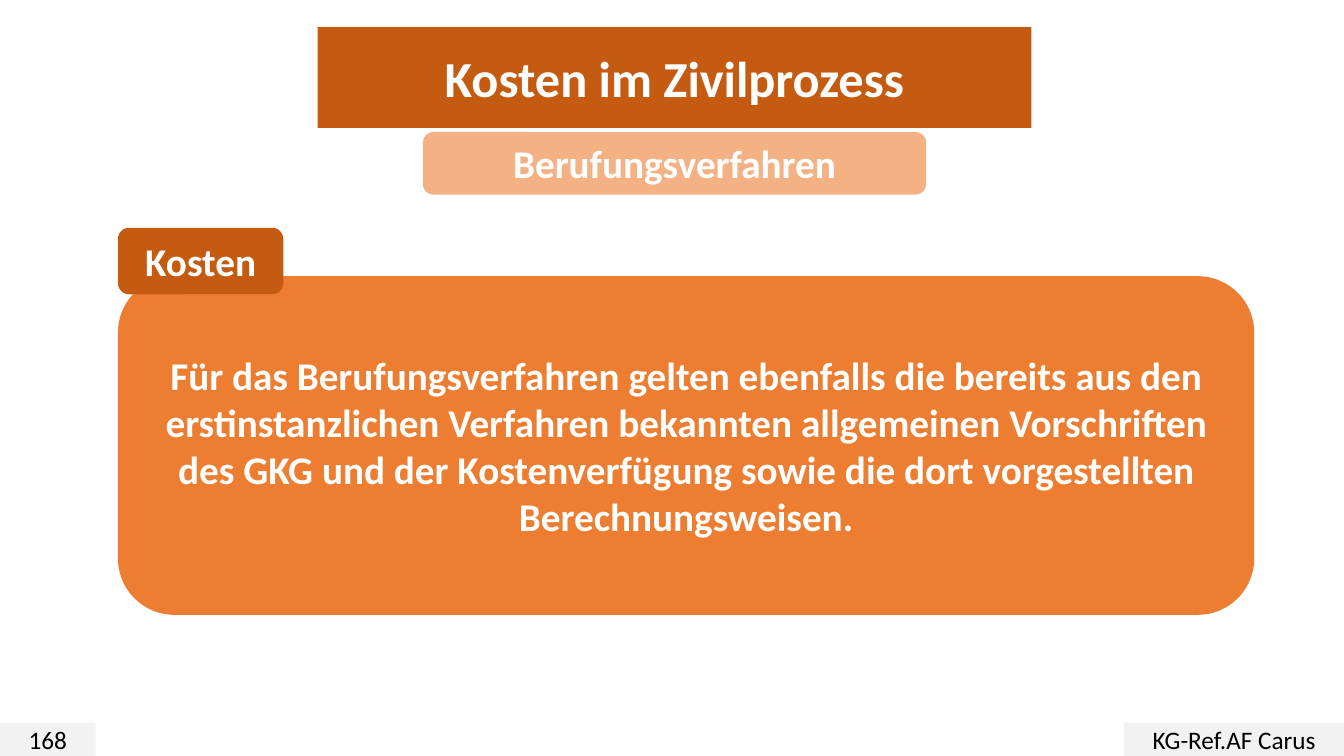
from lxml import etree
from pptx import Presentation
from pptx.dml.color import RGBColor
from pptx.enum.shapes import MSO_SHAPE
from pptx.enum.text import MSO_ANCHOR, MSO_AUTO_SIZE, PP_ALIGN
from pptx.oxml.ns import qn
from pptx.util import Inches, Pt

RECTANGLE = MSO_SHAPE.RECTANGLE
ROUNDED = MSO_SHAPE.ROUNDED_RECTANGLE
MIDDLE = MSO_ANCHOR.MIDDLE
CENTER = PP_ALIGN.CENTER
NO_AUTOFIT = MSO_AUTO_SIZE.NONE

SLIDE_WIDTH, SLIDE_HEIGHT = 13.33, 7.5
TITLE_ONLY = 5
FONT = "Calibri"
DARK_ORANGE, ORANGE, LIGHT_ORANGE = "C55A11", "ED7D31", "F4B183"
GREY, WHITE, BLACK = "F2F2F2", "FFFFFF", "000000"


def color(value):
    return RGBColor.from_string(value)


def style_box(box, text, fill, size, font_color=WHITE, bold=True):
    box.fill.solid()
    box.fill.fore_color.rgb = color(fill)
    box.line.fill.background()
    frame = box.text_frame
    frame.text = text
    frame.word_wrap = True
    frame.auto_size = NO_AUTOFIT
    frame.vertical_anchor = MIDDLE
    para = frame.paragraphs[0]
    para.alignment = CENTER
    font = para.runs[0].font
    font.name, font.size, font.bold = FONT, Pt(size), bold
    font.color.rgb = color(font_color)


def add_box(shapes, kind, area, *style, **options):
    box = shapes.add_shape(kind, *map(Inches, area))
    box.shadow.inherit = False
    style_box(box, *style, **options)


def add_heading(page, area, title, subtitle):
    """Place the title with a narrower subtitle centred beneath it."""
    left, top, width, height = area
    title_height, subtitle_height, subtitle_width = 1, 0.62, 4.99
    box = page.shapes.title
    box.left, box.top = Inches(left), Inches(top)
    box.width, box.height = Inches(width), Inches(title_height)
    outline = etree.SubElement(box.element.spPr, qn("a:prstGeom"), prst="roundRect")
    etree.SubElement(outline, qn("a:avLst"))
    style_box(box, title, DARK_ORANGE, 36)
    subtitle_area = (left + (width - subtitle_width) / 2, top + height - subtitle_height,
                     subtitle_width, subtitle_height)
    add_box(page.shapes, ROUNDED, subtitle_area, subtitle, LIGHT_ORANGE, 28)


def add_labelled_panel(page, area, label, text):
    """Group a panel with the label that overlaps its upper left corner."""
    left, top, width, height = area
    label_drop = 0.48
    group = page.shapes.add_group_shape()
    panel_area = (left, top + label_drop, width, height - label_drop)
    add_box(group.shapes, ROUNDED, panel_area, text, ORANGE, 28)
    add_box(group.shapes, ROUNDED, (left, top, 1.64, 0.66), label, DARK_ORANGE, 28)


def add_footer(page, area, number, author):
    left, top, width, height = area
    number_width, author_width = 0.95, 2.18
    parts = ((left, number_width, number),
             (left + width - author_width, author_width, author))
    for part_left, part_width, text in parts:
        add_box(page.shapes, RECTANGLE, (part_left, top, part_width, height),
                text, GREY, 18, font_color=BLACK, bold=False)


def main():
    deck = Presentation()
    deck.slide_width, deck.slide_height = Inches(SLIDE_WIDTH), Inches(SLIDE_HEIGHT)
    page = deck.slides.add_slide(deck.slide_layouts[TITLE_ONLY])
    add_footer(page, (0, SLIDE_HEIGHT - 0.33, SLIDE_WIDTH, 0.33), "168", "KG-Ref.AF Carus")
    add_heading(page, (3.15, 0.27, 7.08, 1.66), "Kosten im Zivilprozess", "Berufungsverfahren")
    add_labelled_panel(
        page, (1.17, 2.26, 11.27, 3.84), "Kosten",
        "Für das Berufungsverfahren gelten ebenfalls die bereits aus den erstinstanzlichen "
        "Verfahren bekannten allgemeinen Vorschriften des GKG und der Kostenverfügung sowie "
        "die dort vorgestellten Berechnungsweisen.")
    deck.save("out.pptx")


if __name__ == "__main__":
    main()
